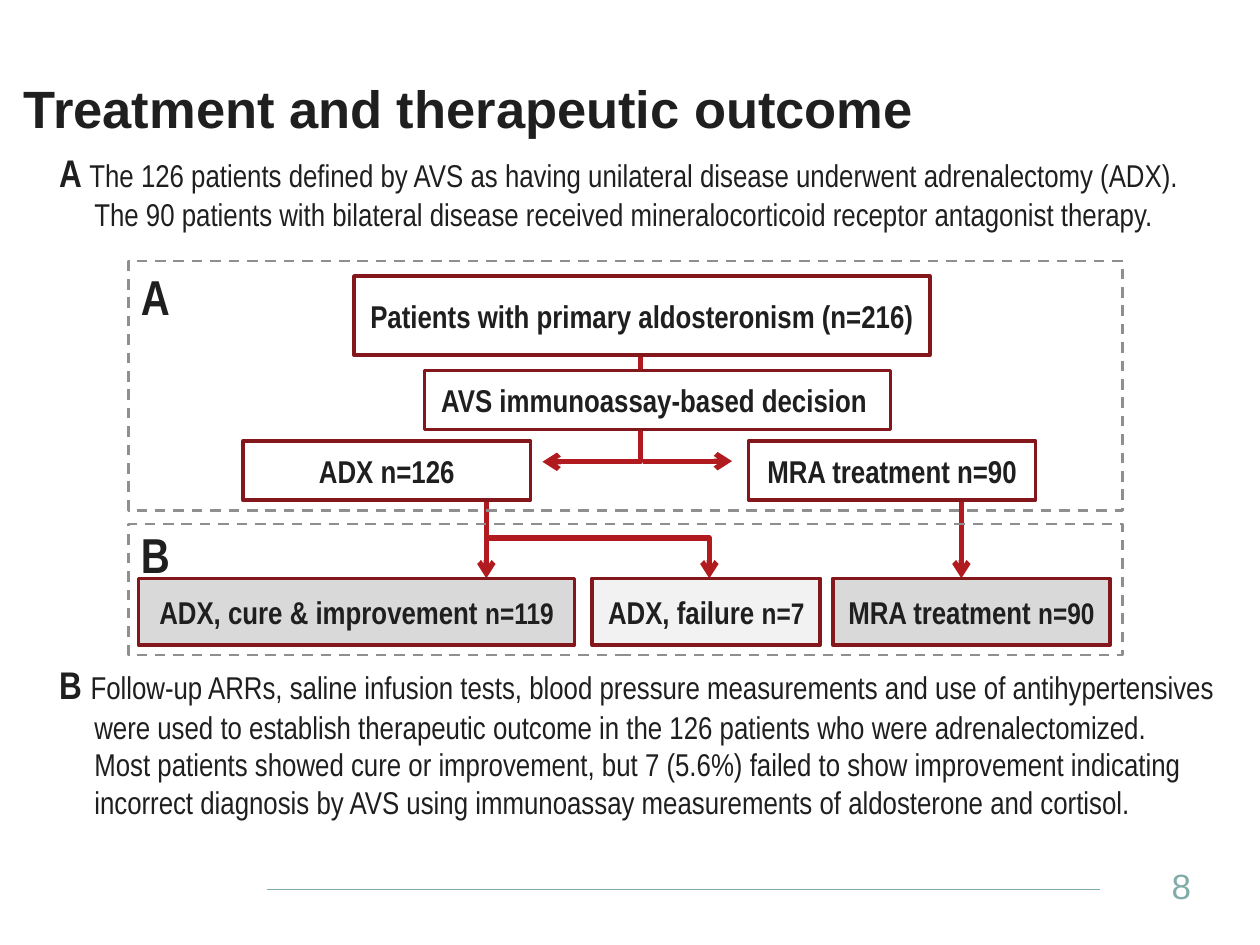
import pptx
import pptx.util
import pptx.dml.color
import pptx.enum.dml
import pptx.enum.shapes
import pptx.enum.text
import pptx.oxml.ns
from lxml import etree

Inches = pptx.util.Inches
Pt = pptx.util.Pt
ANCHOR = pptx.enum.text.MSO_ANCHOR
LINK = pptx.enum.shapes.MSO_CONNECTOR
RECTANGLE = pptx.enum.shapes.MSO_SHAPE.RECTANGLE
qn = pptx.oxml.ns.qn

COLORS = {"text": "1F1F1F", "accent": "81ADA8", "arrow": "B11B20", "border": "83171B",
          "frame": "8F8F8F", "white": "FFFFFF", "grey": "D9D9D9", "pale": "F2F2F2"}
NARROW = "Arial Narrow"


def rgb(name):
    return pptx.dml.color.RGBColor.from_string(COLORS[name])


def add_run(paragraph, text, size, bold=False, font=NARROW, color="text"):
    run = paragraph.add_run()
    run.text = text
    run.font.size = Pt(size)
    run.font.bold = bold
    run.font.name = font
    run.font.color.rgb = rgb(color)


deck = pptx.Presentation()
deck.slide_width, deck.slide_height = Inches(10), Inches(7.5)
slide = deck.slides.add_slide(deck.slide_layouts[5])
shapes = slide.shapes

# Title
title = shapes.title
title.left, title.top, title.width, title.height = map(Inches, (0.09, 0.5, 7.93, 0.82))
title.text_frame.vertical_anchor = ANCHOR.TOP
title.text_frame.margin_top = Inches(0.1)
heading = title.text_frame.paragraphs[0]
heading.alignment = pptx.enum.text.PP_ALIGN.LEFT
add_run(heading, "Treatment and therapeutic outcome", 30, True, "Arial")

# Footer rule and flow arrows: kind, start, end, colour, width, arrowhead
straight, elbow = LINK.STRAIGHT, LINK.ELBOW
links = [
    (straight, (2.12, 7.06), (8.73, 7.06), "accent", 0.5, False),
    (straight, (5.1, 3.66), (5.81, 3.66), "arrow", 3, True),
    (elbow, (4.04, 2.62), (5.35, 3.4), "arrow", 3, True),
    (straight, (3.86, 3.88), (3.86, 4.59), "arrow", 3, True),
    (elbow, (3.86, 4.27), (5.63, 4.59), "arrow", 3, True),
    (straight, (7.63, 3.64), (7.63, 4.59), "arrow", 3, True),
]
for kind, start, end, color, width, arrow in links:
    link = shapes.add_connector(kind, *map(Inches, start + end))
    link.line.color.rgb = rgb(color)
    link.line.width = Pt(width)
    properties = link._element.spPr
    etree.SubElement(properties, qn("a:effectLst"))
    if arrow:
        etree.SubElement(properties.find(qn("a:ln")), qn("a:tailEnd"), type="arrow")
    if kind == elbow:
        properties.find(qn("a:prstGeom")).set("prst", "bentConnector2")
        # The elbow from the top box runs down, then left
        if start == (4.04, 2.62):
            properties.find(qn("a:xfrm")).set("rot", "5400000")

# Flow boxes: left, top, width, height, fill, label, count in smaller type
flow_boxes = [
    (2.81, 2.19, 4.57, 0.63, "white", "Patients with primary aldosteronism (n=216)", ""),
    (3.37, 2.94, 3.7, 0.47, "white", "AVS immunoassay-based decision ", ""),
    (1.93, 3.5, 2.28, 0.47, "white", "ADX n=126", ""),
    (5.94, 3.5, 2.28, 0.47, "white", "MRA treatment n=90", ""),
    (1.1, 4.59, 3.46, 0.53, "grey", "ADX, cure & improvement ", "n=119"),
    (4.7, 4.59, 1.81, 0.53, "pale", "ADX, failure ", "n=7"),
    (6.61, 4.59, 2.2, 0.53, "grey", "MRA treatment ", "n=90"),
]
for left, top, width, height, fill, label, count in flow_boxes:
    box = shapes.add_shape(RECTANGLE, *map(Inches, (left, top, width, height)))
    box.shadow.inherit = False
    box.fill.solid()
    box.fill.fore_color.rgb = rgb(fill)
    box.line.color.rgb = rgb("border")
    box.line.width = Pt(2)
    frame = box.text_frame
    frame.word_wrap = True
    frame.margin_left = frame.margin_right = Inches(0.05)
    frame.vertical_anchor = ANCHOR.MIDDLE
    caption = frame.paragraphs[0]
    caption.alignment = pptx.enum.text.PP_ALIGN.CENTER
    add_run(caption, label, 18, True)
    if count:
        add_run(caption, count, 17, True)

# Dashed stages with their letters
for letter, letter_top, top, height in [("A", 2.07, 2.07, 1.98), ("B", 4.11, 4.16, 1.04)]:
    stage = shapes.add_shape(RECTANGLE, *map(Inches, (1.02, top, 7.89, height)))
    stage.shadow.inherit = False
    stage.fill.background()
    stage.line.color.rgb = rgb("frame")
    stage.line.width = Pt(1.5)
    stage.line.dash_style = pptx.enum.dml.MSO_LINE.DASH
    mark = shapes.add_textbox(*map(Inches, (1.02, letter_top, 0.44, 0.57)))
    mark.text_frame.word_wrap = False
    add_run(mark.text_frame.paragraphs[0], letter, 28, True)

# Explanations: later lines are indented past the letter
explanations = [
    ("A ", 1.13, 0.77, [
        "The 126 patients defined by AVS as having unilateral disease underwent adrenalectomy (ADX).",
        "The 90 patients with bilateral disease received mineralocorticoid receptor antagonist therapy.",
    ]),
    ("B ", 5.2, 1.38, [
        "Follow-up ARRs, saline infusion tests, blood pressure measurements and use of antihypertensives",
        "were used to establish therapeutic outcome in the 126 patients who were adrenalectomized.",
        "Most patients showed cure or improvement, but 7 (5.6%) failed to show improvement indicating",
        "incorrect diagnosis by AVS using immunoassay measurements of aldosterone and cortisol.",
    ]),
]
for letter, top, height, lines in explanations:
    explanation = shapes.add_textbox(*map(Inches, (0.37, top, 9.41, height)))
    frame = explanation.text_frame
    frame.word_wrap = True
    for number, line in enumerate(lines):
        paragraph = frame.add_paragraph() if number else frame.paragraphs[0]
        if number:
            paragraph._p.get_or_add_pPr().set("marL", str(Inches(0.28)))
        else:
            add_run(paragraph, letter, 22, True)
        add_run(paragraph, line, 18)

# Page number
page_number = shapes.add_textbox(*map(Inches, (9.2, 6.83, 0.8, 0.4)))
page_number.text_frame.word_wrap = True
page_number.text_frame.vertical_anchor = ANCHOR.MIDDLE
add_run(page_number.text_frame.paragraphs[0], "8", 20, font="Arial", color="accent")

deck.save("out.pptx")
